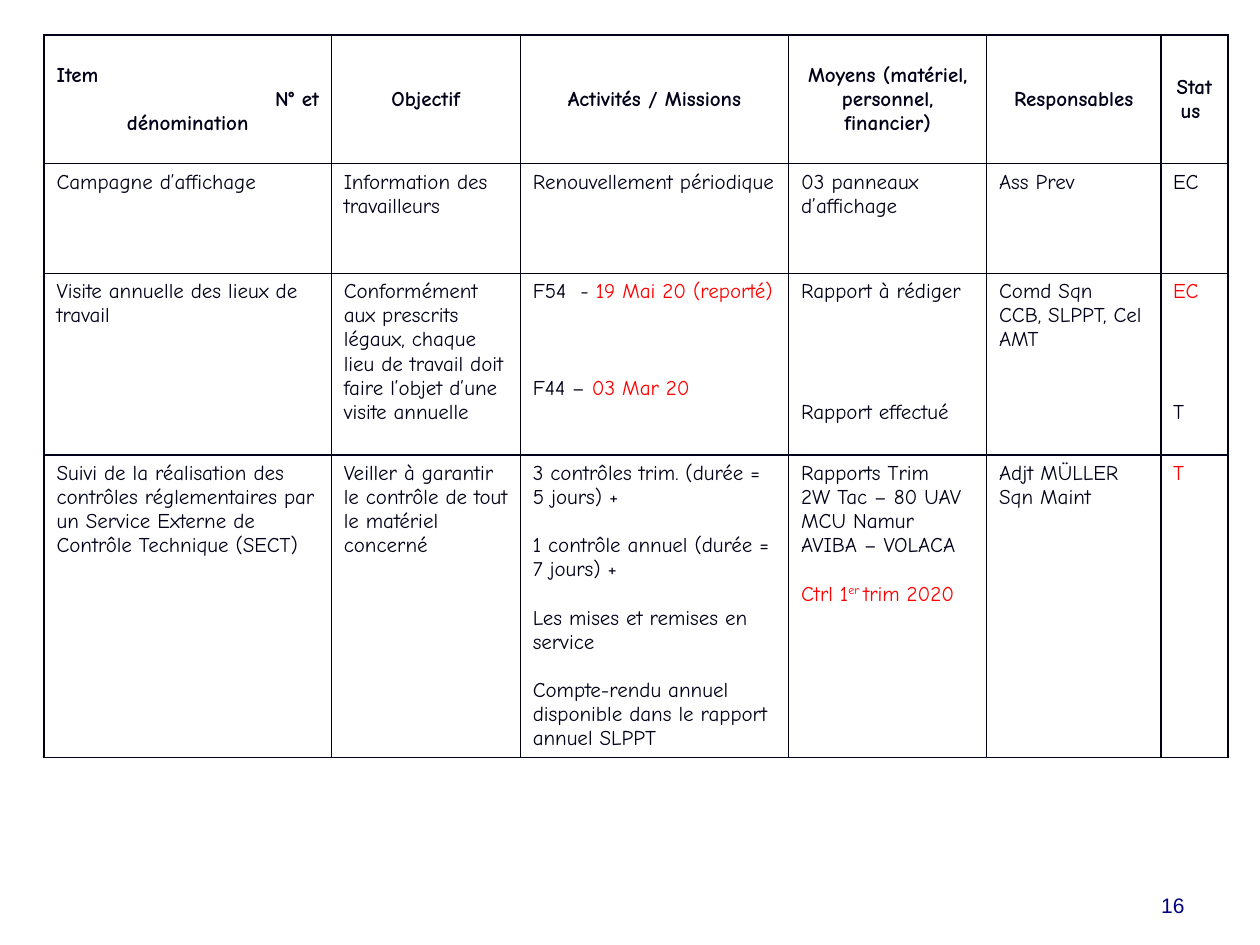
from lxml.etree import SubElement
from pptx import Presentation
from pptx.dml.color import RGBColor
from pptx.enum.text import MSO_ANCHOR as Anchor, PP_ALIGN as Align
from pptx.oxml.ns import qn
from pptx.util import Cm, Pt

INK = RGBColor(0x00, 0x00, 0x18)
RED = RGBColor(0xFF, 0x00, 0x00)
NAVY = RGBColor(0x00, 0x00, 0x80)
LINE_PITCH = 13.8

COLUMN_WIDTHS = [5.79, 3.81, 5.41, 3.99, 3.51, 1.35]
ROW_HEIGHTS = [2.59, 2.21, 3.66, 6.1]

HEADERS = [
    [("Item", Align.LEFT), ("N° et", Align.RIGHT), ("dénomination", Align.CENTER)],
    [("Objectif", Align.CENTER)],
    [("Activités / Missions", Align.CENTER)],
    [("Moyens (matériel, personnel, financier)", Align.CENTER)],
    [("Responsables", Align.CENTER)],
    [("Status ", Align.CENTER)],
]

# Each paragraph: empty lines above it, then its runs as (text, colour).
BODY = [
    [
        [(0, [("Campagne d’affichage", INK)])],
        [(0, [("Information des travailleurs", INK)])],
        [(0, [("Renouvellement périodique", INK)])],
        [(0, [("03 panneaux d’affichage", INK)])],
        [(0, [("Ass Prev", INK)])],
        [(0, [("EC", INK)])],
    ],
    [
        [(0, [("Visite annuelle des lieux de travail", INK)])],
        [(0, [("Conformément aux prescrits légaux, chaque lieu de travail doit "
               "faire l’objet d’une visite annuelle", INK)])],
        [(0, [("F54  - ", INK), ("19 Mai 20 (reporté)", RED)]),
         (3, [("F44 – ", INK), ("03 Mar 20", RED)])],
        [(0, [("Rapport à rédiger", INK)]), (4, [("Rapport effectué", INK)])],
        [(0, [("Comd Sqn", INK)]), (0, [("CCB, SLPPT, Cel AMT", INK)])],
        [(0, [("EC", RED)]), (4, [("T", INK)])],
    ],
    [
        [(0, [("Suivi de la réalisation des contrôles réglementaires par un "
               "Service Externe de Contrôle Technique (SECT)", INK)])],
        [(0, [("Veiller à garantir le contrôle de tout le matériel concerné", INK)])],
        [(0, [("3 contrôles trim. (durée = 5 jours) +", INK)]),
         (1, [("1 contrôle annuel (durée = 7 jours) +", INK)]),
         (1, [("Les mises et remises en service", INK)]),
         (1, [("Compte-rendu annuel disponible dans le rapport annuel SLPPT", INK)])],
        [(0, [("Rapports Trim", INK)]),
         (0, [("2W Tac – 80 UAV MCU Namur", INK)]),
         (0, [("AVIBA – VOLACA", INK)]),
         (1, [("Ctrl 1", RED), ("er ", RED), ("trim 2020", RED)])],
        [(0, [("Adjt MÜLLER", INK)]), (0, [("Sqn Maint", INK)])],
        [(0, [("T", RED)])],
    ],
]


def add_span(para, text, color, bold=False, font="Comic Neue"):
    span = para.add_run()
    span.text = text
    span.font.name = font
    span.font.size = Pt(12)
    span.font.bold = bold
    span.font.color.rgb = color
    if text == "er ":
        span.font._element.set("baseline", "30000")


def style_cell(cell):
    cell.margin_left = cell.margin_right = Cm(0.25)
    cell.margin_top = cell.margin_bottom = Cm(0.13)
    props = cell._tc.get_or_add_tcPr()
    for side in ("a:lnL", "a:lnR", "a:lnT", "a:lnB"):
        line = SubElement(props, qn(side), w=str(Pt(1)))
        fill = SubElement(line, qn("a:solidFill"))
        SubElement(fill, qn("a:srgbClr"), val=str(INK))
    cell.fill.background()


deck = Presentation()
deck.slide_width = Cm(25.4)
deck.slide_height = Cm(19.05)
page = deck.slides.add_slide(deck.slide_layouts[6])

frame = page.shapes.add_table(
    len(ROW_HEIGHTS), len(COLUMN_WIDTHS), Cm(0.89), Cm(0.71),
    Cm(sum(COLUMN_WIDTHS)), Cm(sum(ROW_HEIGHTS)))
table = frame.table
table.first_row = False
table.horz_banding = False
for column, width in zip(table.columns, COLUMN_WIDTHS):
    column.width = Cm(width)
for row, height in zip(table.rows, ROW_HEIGHTS):
    row.height = Cm(height)
for cell in table.iter_cells():
    style_cell(cell)

for col, lines in enumerate(HEADERS):
    cell = table.cell(0, col)
    cell.vertical_anchor = Anchor.MIDDLE
    for index, (text, align) in enumerate(lines):
        words = cell.text_frame
        para = words.add_paragraph() if index else words.paragraphs[0]
        para.alignment = align
        add_span(para, text, INK, bold=True)

for row, cells in enumerate(BODY, start=1):
    for col, paragraphs in enumerate(cells):
        words = table.cell(row, col).text_frame
        for index, (gap, spans) in enumerate(paragraphs):
            para = words.add_paragraph() if index else words.paragraphs[0]
            if gap:
                para.space_before = Pt(gap * LINE_PITCH)
            for text, color in spans:
                add_span(para, text, color)

number_box = page.shapes.add_textbox(Cm(18.21), Cm(17.35), Cm(5.92), Cm(1.27))
number_box.text_frame.word_wrap = True
number_box.text_frame.vertical_anchor = Anchor.BOTTOM
para = number_box.text_frame.paragraphs[0]
para.alignment = Align.RIGHT
add_span(para, "16", NAVY, font="Arial")

deck.save("out.pptx")
